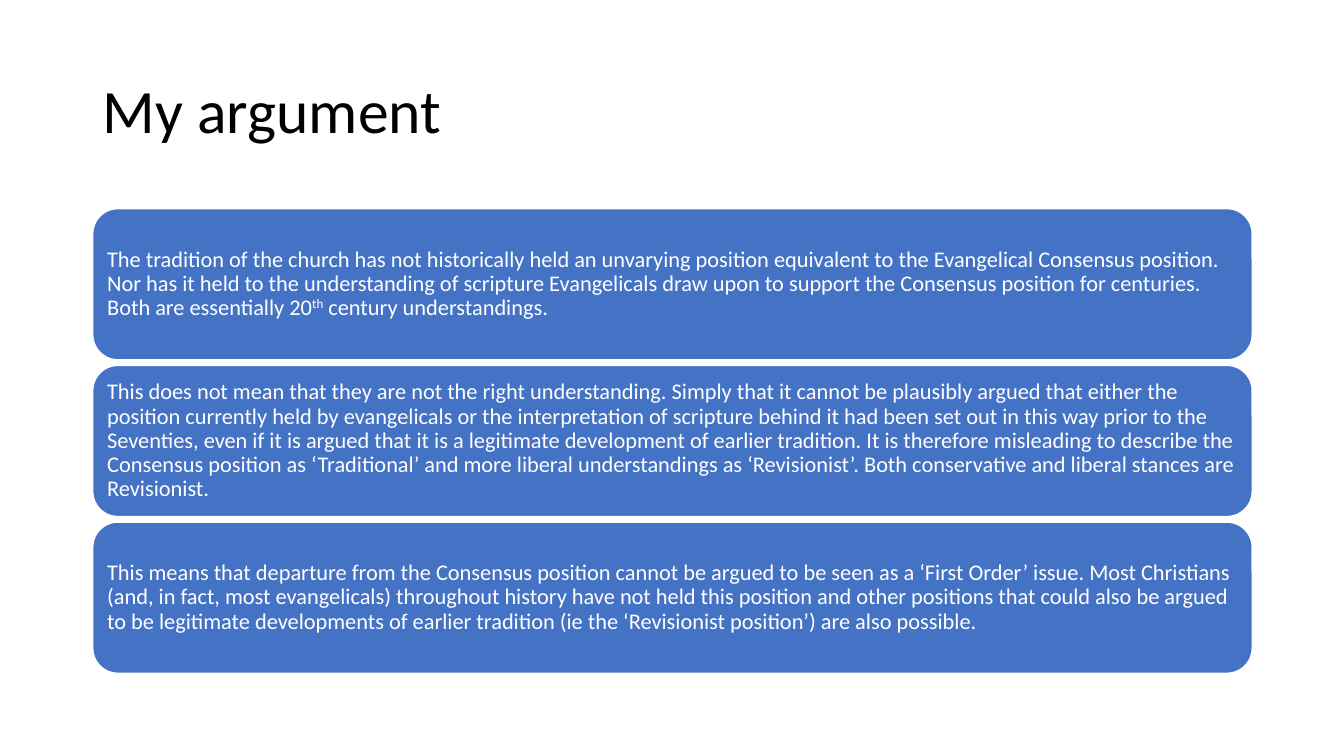
from pptx import Presentation
from pptx.dml.color import RGBColor
from pptx.enum.shapes import MSO_SHAPE
from pptx.enum.text import MSO_ANCHOR, PP_ALIGN
from pptx.util import Inches, Pt


def color(value):
    return RGBColor.from_string(value)


def format_paragraph(paragraph, size, font_color):
    paragraph.alignment = PP_ALIGN.LEFT
    paragraph.line_spacing = 0.9
    paragraph.font.name = "Calibri"
    paragraph.font.size = Pt(size)
    paragraph.font.color.rgb = color(font_color)


ARGUMENTS = [
    [
        ("The tradition of the church has not historically held an unvarying position "
         "equivalent to the Evangelical Consensus position. Nor has it held to the "
         "understanding of scripture Evangelicals draw upon to support the Consensus "
         "position for centuries. Both are essentially 20", False),
        ("th", True),
        (" century understandings.", False),
    ],
    [
        ("This does not mean that they are not the right understanding. Simply that it "
         "cannot be plausibly argued that either the position currently held by "
         "evangelicals or the interpretation of scripture behind it had been set out in "
         "this way prior to the Seventies, even if it is argued that it is a legitimate "
         "development of earlier tradition. It is therefore misleading to describe the "
         "Consensus position as ‘Traditional’ and more liberal understandings as "
         "‘Revisionist’. Both conservative and liberal stances are Revisionist.", False),
    ],
    [
        ("This means that departure from the Consensus position cannot be argued to be "
         "seen as a ‘First Order’ issue. Most Christians (and, in fact, most "
         "evangelicals) throughout history have not held this position and other "
         "positions that could also be argued to be legitimate developments of earlier "
         "tradition (ie the ‘Revisionist position’) are also possible.", False),
    ],
]
LEFT, WIDTH = 0.92, 11.5
FIRST_TOP, LAST_TOP, BOX_HEIGHT = 2.07, 5.18, 1.5

presentation = Presentation()
presentation.slide_width = Inches(13.33)
presentation.slide_height = Inches(7.5)
slide = presentation.slides.add_slide(presentation.slide_layouts[5])
slide.background.fill.solid()
slide.background.fill.fore_color.rgb = color("FFFFFF")

title = slide.shapes.title
title.left, title.top = Inches(LEFT), Inches(0.4)
title.width, title.height = Inches(WIDTH), Inches(1.45)
title.text_frame.text = "My argument"
title.text_frame.vertical_anchor = MSO_ANCHOR.MIDDLE
format_paragraph(title.text_frame.paragraphs[0], 44, "000000")

pitch = (LAST_TOP - FIRST_TOP) / (len(ARGUMENTS) - 1)
for index, argument in enumerate(ARGUMENTS):
    shape = slide.shapes.add_shape(
        MSO_SHAPE.ROUNDED_RECTANGLE,
        Inches(LEFT), Inches(FIRST_TOP + index * pitch), Inches(WIDTH), Inches(BOX_HEIGHT),
    )
    shape.shadow.inherit = False
    shape.fill.solid()
    shape.fill.fore_color.rgb = color("4472C4")
    shape.line.color.rgb = color("FFFFFF")
    shape.line.width = Pt(1)

    text_frame = shape.text_frame
    text_frame.word_wrap = True
    text_frame.vertical_anchor = MSO_ANCHOR.MIDDLE
    text_frame.margin_left = text_frame.margin_right = Inches(0.07)
    text_frame.margin_top = text_frame.margin_bottom = Inches(0.07)
    paragraph = text_frame.paragraphs[0]
    format_paragraph(paragraph, 16, "FFFFFF")
    for text, superscript in argument:
        run = paragraph.add_run()
        run.text = text
        if superscript:
            run._r.get_or_add_rPr().set("baseline", "30000")

presentation.save("out.pptx")
